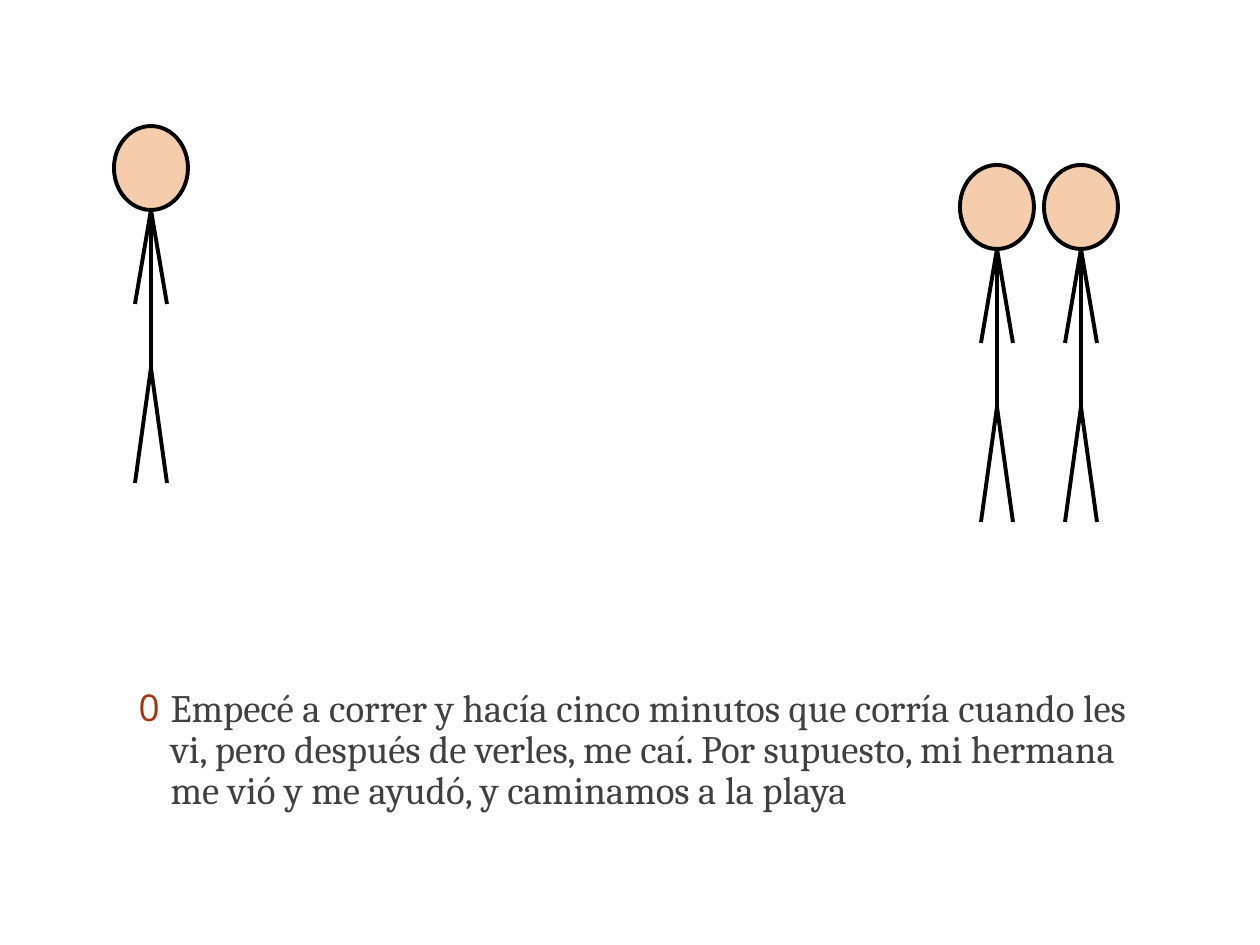
from dataclasses import dataclass

from lxml import etree
from pptx import Presentation
from pptx.dml.color import RGBColor
from pptx.enum.shapes import MSO_CONNECTOR, MSO_SHAPE
from pptx.enum.text import MSO_ANCHOR, MSO_AUTO_SIZE
from pptx.oxml.ns import qn
from pptx.util import Emu, Pt

STRAIGHT = MSO_CONNECTOR.STRAIGHT
OVAL = MSO_SHAPE.OVAL
TOP = MSO_ANCHOR.TOP
NO_AUTOFIT = MSO_AUTO_SIZE.NONE

PX_PER_INCH = 126
TITLE_AND_CONTENT = 1

# Stick figure proportions, in px
HEAD_WIDTH, HEAD_HEIGHT = 74, 84
TORSO, ARM_DROP, LEG_DROP, REACH = 158, 94, 115, 16

STORY = (
    "Empecé a correr y hacía cinco minutos que corría cuando les vi, "
    "pero después de verles, me caí. Por supuesto, mi hermana me vió "
    "y me ayudó, y caminamos a la playa"
)


@dataclass(frozen=True)
class Theme:
    font: str = "Cambria"
    bullet_font: str = "Open Sans"
    text: str = "404040"
    bullet: str = "A63212"
    skin: str = "F5CDAC"
    ink: str = "000000"
    body_size: float = 22.2
    line_spacing: float = 0.88
    stroke: float = 2.25


THEME = Theme()


def px(length):
    return Emu(length * 914400 // PX_PER_INCH)


def style_line(line):
    line.color.rgb = RGBColor.from_string(THEME.ink)
    line.width = Pt(THEME.stroke)


def add_limb(group, start, end):
    limb = group.shapes.add_connector(STRAIGHT, *map(px, (*start, *end)))
    style_line(limb.line)
    etree.SubElement(limb._element.spPr, qn("a:effectLst"))


def add_figure(group, center, top):
    # Head
    head = group.shapes.add_shape(
        OVAL, px(center - HEAD_WIDTH // 2), px(top), px(HEAD_WIDTH), px(HEAD_HEIGHT)
    )
    head.shadow.inherit = False
    head.fill.solid()
    head.fill.fore_color.rgb = RGBColor.from_string(THEME.skin)
    style_line(head.line)

    # Torso, then an arm and a leg on each side
    neck = (center, top + HEAD_HEIGHT)
    hip = (center, neck[1] + TORSO)
    add_limb(group, neck, hip)
    for joint, drop in ((neck, ARM_DROP), (hip, LEG_DROP)):
        for side in (REACH, -REACH):
            add_limb(group, joint, (center + side, joint[1] + drop))


def add_bullet(para, mark, indent):
    properties = para._p.get_or_add_pPr()
    properties.set("marL", str(px(indent)))
    properties.set("indent", str(-px(indent)))
    color = etree.SubElement(properties, qn("a:buClr"))
    etree.SubElement(color, qn("a:srgbClr"), val=THEME.bullet)
    etree.SubElement(properties, qn("a:buSzPct"), val="95000")
    etree.SubElement(properties, qn("a:buFont"), typeface=THEME.bullet_font)
    etree.SubElement(properties, qn("a:buChar"), char=mark)


def fill_story(box, text):
    box.left, box.top, box.width, box.height = map(px, (126, 683, 1029, 139))
    frame = box.text_frame
    frame.word_wrap = True
    frame.auto_size = NO_AUTOFIT
    frame.vertical_anchor = TOP
    para = frame.paragraphs[0]
    add_bullet(para, "0", 32)
    para.space_before = Pt(0)
    para.line_spacing = THEME.line_spacing
    span = para.add_run()
    span.text = text
    span.font.name = THEME.font
    span.font.size = Pt(THEME.body_size)
    span.font.color.rgb = RGBColor.from_string(THEME.text)


def main():
    deck = Presentation()
    deck.slide_width, deck.slide_height = px(1260), px(945)
    page = deck.slides.add_slide(deck.slide_layouts[TITLE_AND_CONTENT])

    # The page has body text but no title
    title = page.shapes.title._element
    title.getparent().remove(title)
    fill_story(page.placeholders[1], STORY)

    # The narrator on the left, the pair on the right
    for centers, top in (((151,), 126), ((1081, 997), 165)):
        group = page.shapes.add_group_shape()
        for center in centers:
            add_figure(group, center, top)

    deck.save("out.pptx")


if __name__ == "__main__":
    main()
